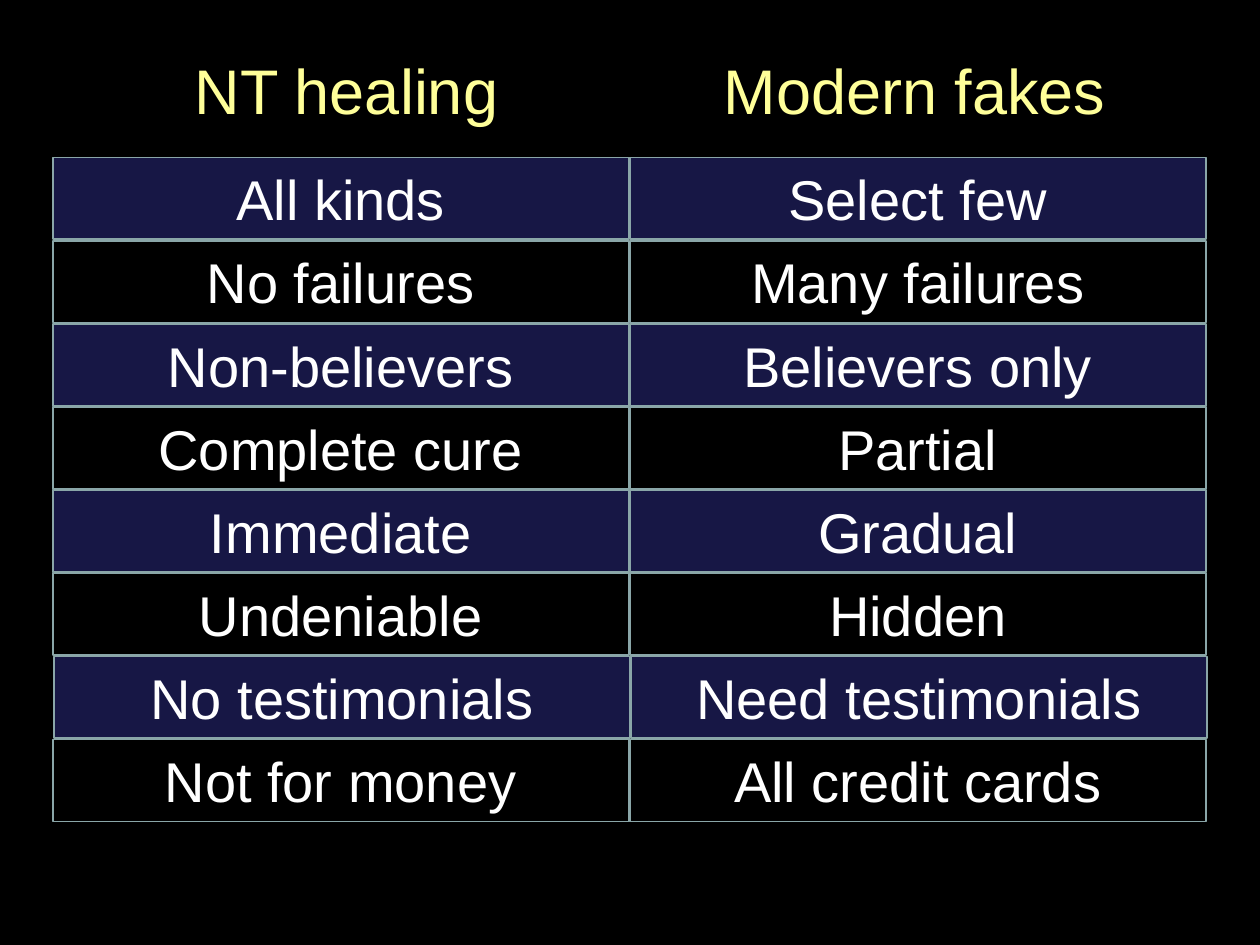
"""Build a two-column slide comparing NT healing with modern fakes."""
from dataclasses import dataclass

from pptx import Presentation
from pptx import util as u
from pptx.dml.color import RGBColor
from pptx.enum import shapes, text

BLACK = RGBColor(0x00, 0x00, 0x00)
NAVY = RGBColor(0x17, 0x17, 0x45)
TEAL = RGBColor(0x8A, 0xA6, 0xA8)
WHITE = RGBColor(0xFF, 0xFF, 0xFF)
YELLOW = RGBColor(0xFF, 0xFF, 0x99)

ROW_TOP, ROW_PITCH = 1.25, 0.66
CELL_WIDTH, CELL_HEIGHT = 4.57, 0.65


@dataclass(frozen=True)
class Column:
    heading: str
    heading_left: float
    cell_left: float


@dataclass(frozen=True)
class Row:
    healing: str
    fakes: str
    shift: float = 0


COLUMNS = (Column("NT healing", 0.5, 0.42), Column("Modern fakes", 5.01, 5))
ROWS = (
    Row("All kinds", "Select few"),
    Row("No failures", "Many failures"),
    Row("Non-believers", "Believers only"),
    Row("Complete cure", "Partial"),
    Row("Immediate", "Gradual"),
    Row("Undeniable", "Hidden"),
    Row("No testimonials", "Need testimonials", shift=0.01),
    Row("Not for money", "All credit cards"),
)


def write_centred(box, words: str, size: int, colour: RGBColor) -> None:
    frame = box.text_frame
    frame.word_wrap = True
    frame.vertical_anchor = text.MSO_ANCHOR.MIDDLE
    para = frame.paragraphs[0]
    para.alignment = text.PP_ALIGN.CENTER
    span = para.add_run()
    span.text = words
    span.font.name = "Arial"
    span.font.size = u.Pt(size)
    span.font.color.rgb = colour


def draw_heading(page, column: Column) -> None:
    box = page.shapes.add_textbox(
        u.Inches(column.heading_left), u.Inches(0.08), u.Inches(4.5), u.Inches(1.25))
    write_centred(box, column.heading, 36, YELLOW)


def draw_cell(page, words: str, left: float, top: float, fill: RGBColor) -> None:
    box = page.shapes.add_shape(
        shapes.MSO_SHAPE.RECTANGLE, u.Inches(left), u.Inches(top),
        u.Inches(CELL_WIDTH), u.Inches(CELL_HEIGHT))
    box.shadow.inherit = False
    box.fill.solid()
    box.fill.fore_color.rgb = fill
    box.line.color.rgb = TEAL
    box.line.width = u.Pt(1)
    write_centred(box, words, 32, WHITE)


def main() -> None:
    deck = Presentation()
    deck.slide_width, deck.slide_height = u.Inches(10), u.Inches(7.5)
    page = deck.slides.add_slide(deck.slide_layouts[6])
    page.background.fill.solid()
    page.background.fill.fore_color.rgb = BLACK

    for column in COLUMNS:
        draw_heading(page, column)
    for index, row in enumerate(ROWS):
        fill = BLACK if index % 2 else NAVY
        for column, words in zip(COLUMNS, (row.healing, row.fakes)):
            draw_cell(page, words, column.cell_left + row.shift,
                      ROW_TOP + index * ROW_PITCH, fill)

    deck.save("out.pptx")


if __name__ == "__main__":
    main()
